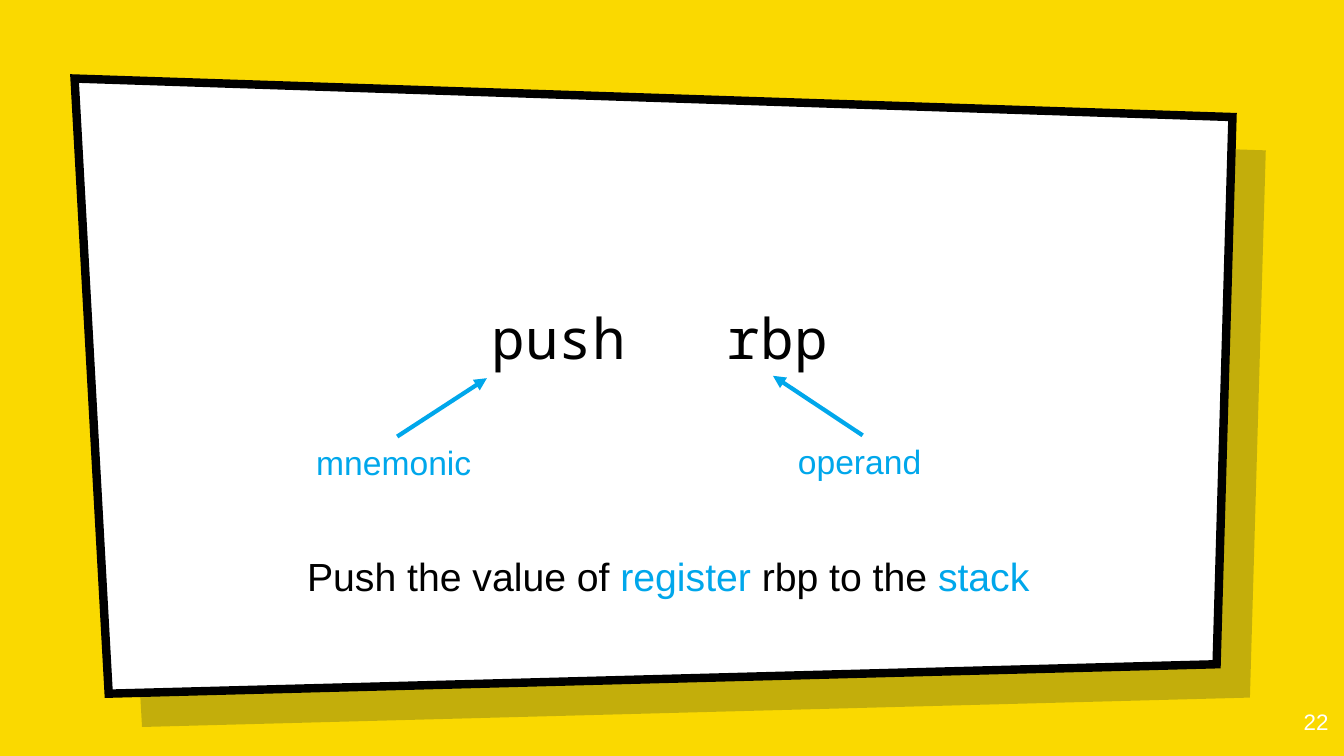
"""Build a slide that explains the parts of the push instruction."""
from pptx import Presentation
from pptx.dml.color import RGBColor
from pptx.enum import shapes, text
from pptx.oxml import ns, xmlchemy
from pptx.util import Cm, Pt

COLOURS = {
    "yellow": "FAD900",
    "navy": "001936",
    "white": "FFFFFF",
    "black": "000000",
    "blue": "00A7EB",
}
PANEL_CORNERS = [(1.88, 1.98), (31.06, 2.95), (30.66, 16.74), (2.74, 17.48)]
SHADOW_OFFSET = 0.84


def colour(name):
    """Return the named colour."""
    return RGBColor.from_string(COLOURS[name])


def add_element(parent, tag, **attributes):
    """Append a DrawingML element to its parent and return it."""
    element = xmlchemy.OxmlElement(tag)
    for name, value in attributes.items():
        element.set(name, str(value))
    parent.append(element)
    return element


def add_panel(slide, fill, offset=0, opacity=None, border=None):
    """Draw the slanted panel, moved by the offset on both axes."""
    corners = [(Cm(x + offset), Cm(y + offset)) for x, y in PANEL_CORNERS]
    builder = slide.shapes.build_freeform(*corners[0])
    builder.add_line_segments(corners[1:], close=True)
    shape = builder.convert_to_shape()
    shape.shadow.inherit = False
    shape.fill.solid()
    shape.fill.fore_color.rgb = colour(fill)
    if opacity:
        tint = shape.fill._xPr.find(".//" + ns.qn("a:srgbClr"))
        add_element(tint, "a:alpha", val=opacity * 1000)
    if border:
        shape.line.color.rgb = colour("black")
        shape.line.width = Pt(border)
        add_element(shape.line._get_or_add_ln(), "a:miter", lim=800000)
    else:
        shape.line.fill.background()


def add_text(slide, runs, left, top, width, height, *, size, font="Arial",
             align=text.PP_ALIGN.LEFT, wrap=False, grow=True, inset=0.13, tab=None):
    """Add a text box from pairs of wording and colour name."""
    shape = slide.shapes.add_textbox(Cm(left), Cm(top), Cm(width), Cm(height))
    frame = shape.text_frame
    frame.word_wrap = wrap
    frame.auto_size = text.MSO_AUTO_SIZE.SHAPE_TO_FIT_TEXT if grow else text.MSO_AUTO_SIZE.NONE
    frame.margin_top = frame.margin_bottom = Cm(inset)
    paragraph = frame.paragraphs[0]
    paragraph.alignment = align
    if tab:
        stops = add_element(paragraph._p.get_or_add_pPr(), "a:tabLst")
        add_element(stops, "a:tab", pos=Cm(tab), algn="l")
    for wording, name in runs:
        run = paragraph.add_run()
        run.text = wording
        run.font.name = font
        run.font.size = Pt(size)
        run.font.color.rgb = colour(name)


def add_arrow(slide, start, end):
    """Draw a blue arrow that points at its end."""
    connector = slide.shapes.add_connector(
        shapes.MSO_CONNECTOR.STRAIGHT, *map(Cm, start), *map(Cm, end))
    connector.line.color.rgb = colour("blue")
    connector.line.width = Pt(3)
    add_element(connector.line._get_or_add_ln(), "a:tailEnd", type="triangle")
    add_element(connector._element.spPr, "a:effectLst")


def main():
    """Build and save the presentation."""
    presentation = Presentation()
    presentation.slide_width, presentation.slide_height = Cm(33.87), Cm(19.05)
    slide = presentation.slides.add_slide(presentation.slide_layouts[6])
    slide.background.fill.solid()
    slide.background.fill.fore_color.rgb = colour("yellow")

    add_panel(slide, "navy", offset=SHADOW_OFFSET, opacity=22)
    add_panel(slide, "white", border=6)
    add_text(slide, [("22", "white")], 31.7, 17.6, 2.03, 1.45, size=16,
             align=text.PP_ALIGN.RIGHT, wrap=True, grow=False, inset=0.25)

    add_text(slide, [("push\trbp", "black")], 12.14, 7.52, 9.2, 1.96, size=40,
             font="Noto Sans Mono", wrap=True, tab=5.93)
    add_text(slide, [("mnemonic", "blue")], 7.72, 11, 4.52, 1.27, size=24)
    add_arrow(slide, (10.01, 11), (12.27, 9.53))
    add_text(slide, [("operand", "blue")], 19.86, 10.97, 3.73, 1.27, size=24)
    add_arrow(slide, (21.74, 10.97), (19.48, 9.47))

    sentence = [("Push the value of ", "black"), ("register ", "blue"),
                ("rbp to the ", "black"), ("stack", "blue")]
    add_text(slide, sentence, 7.49, 13.79, 18.9, 1.45, size=28)
    presentation.save("out.pptx")


if __name__ == "__main__":
    main()
